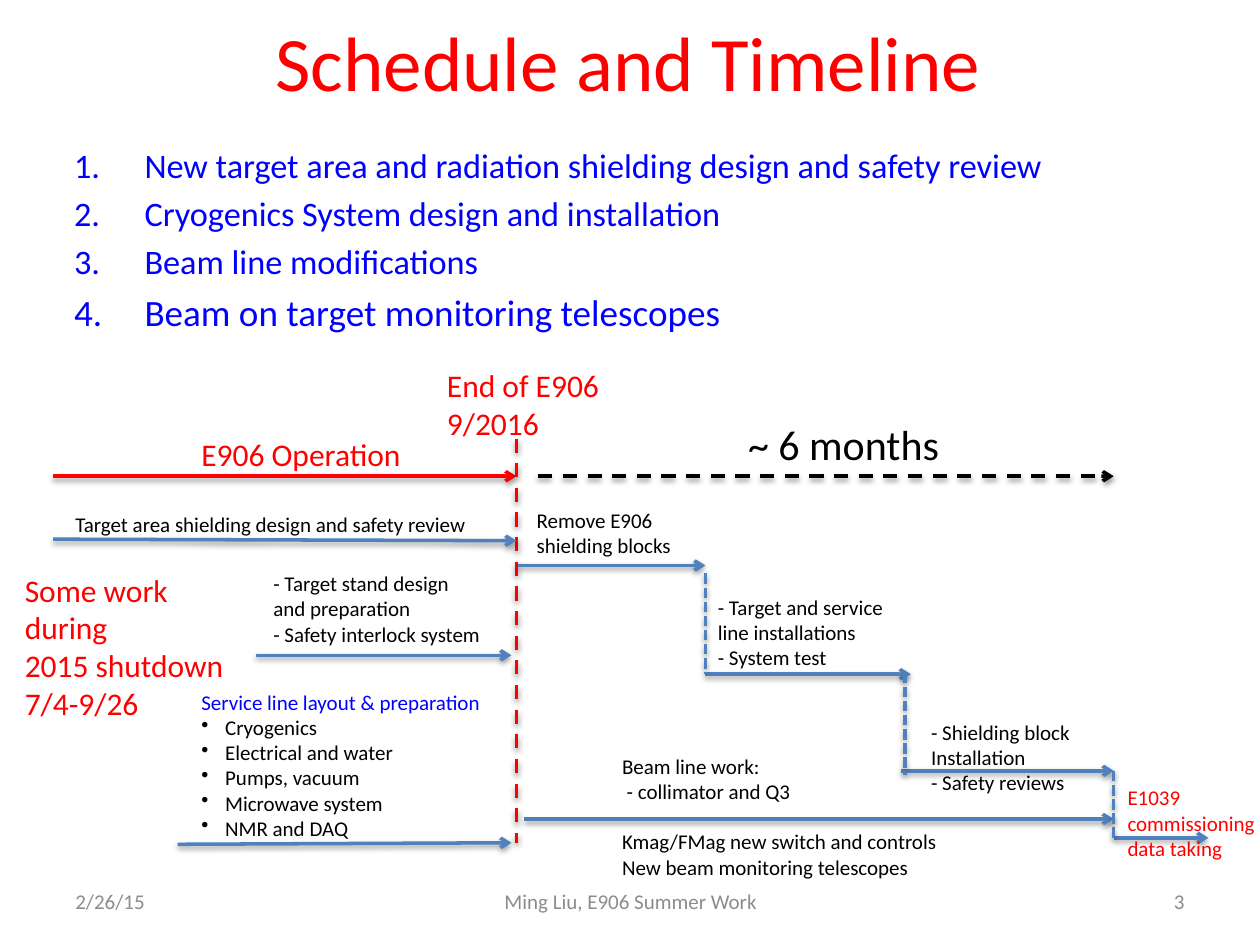
from pptx import Presentation
from pptx import util as u
from pptx.dml.color import RGBColor
from pptx.enum import dml, shapes, text
from pptx.oxml import parse_xml
from pptx.oxml.ns import nsdecls

COLORS = {"red": "FF0000", "blue": "0000FF", "black": "000000",
          "gray": "8C8C8C", "steel": "4F81BD"}
DASH = dml.MSO_LINE.DASH
SHORT_DASH = dml.MSO_LINE.SQUARE_DOT
ALIGN = text.PP_ALIGN


def xml(tag, attrs="", inner=""):
    return parse_xml(f"<a:{tag} {nsdecls('a')} {attrs}>{inner}</a:{tag}>")


class Timeline:
    font = "Calibri"
    line_width = 2

    def __init__(self, prs):
        self.s = prs.slides.add_slide(prs.slide_layouts[1])

    def place(self, sp, box):
        sp.left, sp.top, sp.width, sp.height = [u.Cm(v) for v in box]

    def run(self, p, words, size, color):
        r = p.add_run()
        r.text = words
        r.font.name = self.font
        r.font.size = u.Pt(size)
        r.font.color.rgb = RGBColor.from_string(COLORS[color])

    def paragraphs(self, tf, lines, size, color, align=None):
        for i, words in enumerate(lines):
            p = tf.paragraphs[0] if i == 0 else tf.add_paragraph()
            p.alignment = align
            self.run(p, words, size, color)
        return tf.paragraphs

    def bullet(self, p, indent, mark):
        pPr = p._p.get_or_add_pPr()
        pPr.set("marL", str(u.Cm(indent)))
        pPr.set("indent", str(-u.Cm(indent)))
        pPr.append(mark)

    def title(self, words, box):
        sp = self.s.shapes.title
        self.place(sp, box)
        tf = sp.text_frame
        tf.auto_size = text.MSO_AUTO_SIZE.NONE
        self.paragraphs(tf, [words], 44, "red", ALIGN.CENTER)

    def numbered(self, items, box):
        sp = self.s.placeholders[1]
        self.place(sp, box)
        tf = sp.text_frame
        tf.auto_size = text.MSO_AUTO_SIZE.NONE
        for i, (words, size) in enumerate(items):
            p = tf.paragraphs[0] if i == 0 else tf.add_paragraph()
            self.run(p, words, size, "blue")
            self.bullet(p, 1.42, xml("buAutoNum", 'type="arabicPeriod"'))

    def label(self, lines, box, size=12, color="black", wrap=False):
        sp = self.s.shapes.add_textbox(*[u.Cm(v) for v in box])
        tf = sp.text_frame
        tf.word_wrap = wrap
        tf.auto_size = text.MSO_AUTO_SIZE.SHAPE_TO_FIT_TEXT
        return self.paragraphs(tf, lines, size, color)

    def bulleted(self, heading, items, box):
        p = self.label([heading], box, color="blue")[0]
        tf = self.s.shapes[-1].text_frame
        for words in items:
            p = tf.add_paragraph()
            self.run(p, words, 12, "black")
            self.bullet(p, 0.48, xml("buChar", 'char="•"'))

    def footer(self, words, left, width, align):
        sp = self.s.shapes.add_textbox(
            u.Cm(left), u.Cm(17.65), u.Cm(width), u.Cm(1.02))
        tf = sp.text_frame
        tf.word_wrap = True
        tf.vertical_anchor = text.MSO_ANCHOR.MIDDLE
        self.paragraphs(tf, [words], 12, "gray", align)

    def line(self, x1, y1, x2, y2, color="steel", dash=None, arrow=True):
        cx = self.s.shapes.add_connector(
            shapes.MSO_CONNECTOR.STRAIGHT,
            u.Cm(x1), u.Cm(y1), u.Cm(x2), u.Cm(y2))
        cx.line.color.rgb = RGBColor.from_string(COLORS[color])
        cx.line.width = u.Pt(self.line_width)
        if dash:
            cx.line.dash_style = dash
        if arrow:
            cx.line._get_or_add_ln().append(xml("tailEnd", 'type="arrow"'))
        cx._element.spPr.append(xml("effectLst", inner=(
            '<a:outerShdw blurRad="40000" dist="20000" dir="5400000" '
            'rotWithShape="0"><a:srgbClr val="000000"><a:alpha val="38000"/>'
            '</a:srgbClr></a:outerShdw>')))


def main():
    prs = Presentation()
    prs.slide_width, prs.slide_height = u.Cm(25.4), u.Cm(19.05)
    t = Timeline(prs)

    t.title("Schedule and Timeline", (1.24, 0, 22.86, 2.44))
    t.numbered([
        ("New target area and radiation shielding design and safety review", 19.6),
        ("Cryogenics System design and installation", 19.6),
        ("Beam line modifications", 19.6),
        ("Beam on target monitoring telescopes", 21.2),
    ], (1.24, 2.79, 22.86, 3.89))

    t.footer("2/26/15", 1.27, 5.92, ALIGN.LEFT)
    t.footer("Ming Liu, E906 Summer Work", 8.69, 8.05, ALIGN.CENTER)
    t.footer("3", 18.21, 5.92, ALIGN.RIGHT)

    start, shutdown, installed, tested, ready = 1.07, 10.41, 14.22, 18.24, 22.45

    t.line(start, 9.6, shutdown, 9.6, "red")
    t.line(shutdown, 8.84, shutdown, 16.99, "red", DASH, arrow=False)
    t.line(10.85, 9.6, ready, 9.6, "black", DASH)

    for x1, y1, x2, y2 in [
        (start, 10.87, shutdown, 10.9),
        (5.16, 13.21, 10.31, 13.21),
        (3.58, 17.02, 10.31, 16.99),
        (10.44, 11.4, installed, 11.4),
        (installed, 13.59, 18.36, 13.59),
        (18.16, 15.54, ready, 15.54),
        (10.57, 16.51, ready, 16.51),
        (ready, 16.89, 24.36, 16.89),
    ]:
        t.line(x1, y1, x2, y2)

    for x, top, bottom in [(installed, 11.56, 13.59), (tested, 13.56, 15.62),
                           (ready, 15.54, 16.89)]:
        t.line(x, top, x, bottom, dash=SHORT_DASH, arrow=False)

    t.label(["End of E906", "9/2016"], (8.76, 7.26, 3.61, 1.8), 18, "red")
    t.label(["E906 Operation"], (3.81, 8.64, 4.6, 1.02), 18, "red")
    t.label(["~ 6 months"], (14.83, 8.31, 4.42, 1.27), 24)
    t.label(["Some work", "during", "2015 shutdown", "7/4-9/26"],
            (0.25, 11.38, 4.57, 3.33), 18, "red")
    t.label(["Target area shielding design and safety review"],
            (1.27, 10.19, 8.53, 0.76))
    t.label(["- Target stand design", "and preparation",
             "- Safety interlock system"], (5.26, 11.38, 4.78, 1.8))
    t.label(["Remove E906", "shielding blocks"],
            (10.57, 10.11, 3.48, 1.27), wrap=True)
    t.label(["- Target and service", "line installations", "- System test"],
            (14.22, 11.86, 3.94, 1.8))
    t.label(["- Shielding block", "Installation", "- Safety reviews"],
            (18.52, 14.38, 3.33, 2.31))
    t.label(["E1039", "commissioning", "data taking"],
            (22.48, 15.7, 3.1, 1.8), color="red")
    t.bulleted("Service line layout & preparation",
               ["Cryogenics", "Electrical and water", "Pumps, vacuum",
                "Microwave system", "NMR and DAQ"], (3.81, 13.77, 6.22, 3.84))
    beam = t.label(["Beam line work:", " - collimator and Q3",
                    "Kmag/FMag new switch and controls",
                    "New beam monitoring telescopes"],
                   (12.29, 15.06, 6.96, 2.82))
    beam[2].space_before = u.Pt(14.4)

    prs.save("out.pptx")


if __name__ == "__main__":
    main()
